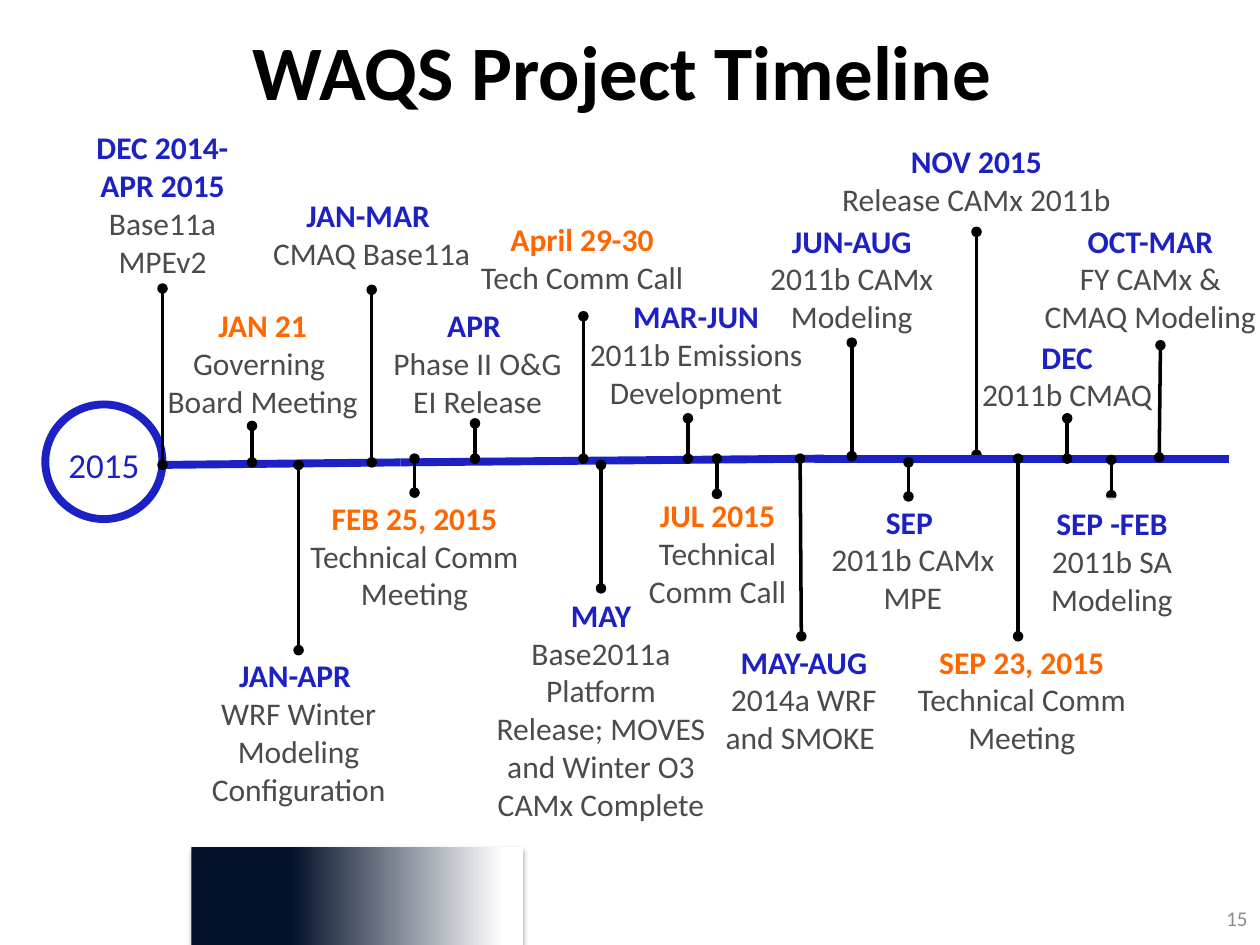
import pptx
import pptx.dml.color
import pptx.enum.shapes
import pptx.enum.text
import pptx.oxml
import pptx.oxml.ns
import pptx.util
from lxml import etree

COLORS = {
    "blue": "1C21C4",
    "orange": "FF6600",
    "body": "4B4B4B",
    "black": "000000",
    "white": "FFFFFF",
    "navy": "03112B",
    "gray": "8C8C8C",
}
COLUMNS, ROWS = 100, 75
SHAPE = pptx.enum.shapes.MSO_SHAPE
ALIGN = pptx.enum.text.PP_ALIGN
ANCHOR = pptx.enum.text.MSO_ANCHOR


def rgb(color):
    return pptx.dml.color.RGBColor.from_string(COLORS[color])


def add_xml(parent, tag, **attributes):
    return etree.SubElement(parent, pptx.oxml.ns.qn(tag), attributes)


class Timeline:
    font = "Calibri"

    def __init__(self, deck):
        self.deck = deck
        self.slide = deck.slides.add_slide(deck.slide_layouts[6])

    def x(self, column):
        return round(self.deck.slide_width * column / COLUMNS)

    def y(self, row):
        return round(self.deck.slide_height * row / ROWS)

    def area(self, left, top, width, height):
        return self.x(left), self.y(top), self.x(width), self.y(height)

    def text(self, area, paragraphs, align=ALIGN.CENTER, anchor=ANCHOR.TOP, grow=True):
        box = self.slide.shapes.add_textbox(*self.area(*area))
        frame = box.text_frame
        frame.word_wrap = True
        frame.vertical_anchor = anchor
        if grow:
            frame.auto_size = pptx.enum.text.MSO_AUTO_SIZE.SHAPE_TO_FIT_TEXT
        for index, (words, size, color, bold) in enumerate(paragraphs):
            paragraph = frame.add_paragraph() if index else frame.paragraphs[0]
            paragraph.alignment = align
            run = paragraph.add_run()
            run.text = words
            run.font.name = self.font
            run.font.size = pptx.util.Pt(size)
            run.font.bold = bold
            run.font.color.rgb = rgb(color)
        return box

    def label(self, area, date, color, *details, veil=False):
        box = self.text(area, [(date, 18, color, True)] + [(detail, 18, "body", False) for detail in details])
        if veil:
            box.fill.solid()
            box.fill.fore_color.rgb = rgb("white")
            tint = box.fill._xPr.find(".//" + pptx.oxml.ns.qn("a:srgbClr"))
            add_xml(tint, "a:alpha", val="84000")

    def line(self, start, end, color, weight, dots=False):
        connector = self.slide.shapes.add_connector(
            pptx.enum.shapes.MSO_CONNECTOR.STRAIGHT,
            self.x(start[0]), self.y(start[1]), self.x(end[0]), self.y(end[1]))
        connector.line.color.rgb = rgb(color)
        connector.line.width = pptx.util.Pt(weight)
        if dots:
            outline = connector.line._get_or_add_ln()
            add_xml(outline, "a:headEnd", type="oval")
            add_xml(outline, "a:tailEnd", type="oval")
        add_xml(connector._element.spPr, "a:effectLst")

    def stem(self, column, top, bottom, lean=0):
        self.line((column, top), (column + lean, bottom), "black", 2, dots=True)

    def ring(self, area, color, weight):
        circle = self.slide.shapes.add_shape(SHAPE.FLOWCHART_CONNECTOR, *self.area(*area))
        circle.shadow.inherit = False
        circle.fill.background()
        circle.line.color.rgb = rgb(color)
        circle.line.width = pptx.util.Pt(weight)

    def fading_band(self, area, stops):
        band = self.slide.shapes.add_shape(SHAPE.RECTANGLE, *self.area(*area))
        band.line.fill.background()
        band.fill.gradient()
        band.fill.gradient_angle = 0
        for stop, (position, color) in zip(band.fill.gradient_stops, stops):
            stop.position = position
            stop.color.rgb = rgb(color)
        effects = add_xml(band._element.spPr, "a:effectLst")
        shadow = add_xml(effects, "a:outerShdw", blurRad=str(pptx.util.Pt(3.1)),
                         dist=str(pptx.util.Pt(1.8)), dir="5400000", rotWithShape="0")
        shade = add_xml(shadow, "a:srgbClr", val=COLORS["black"])
        add_xml(shade, "a:alpha", val="35000")


MILESTONES = [
    ((5.7, 9.7, 14.4, 13.1), "DEC 2014- APR 2015", "blue", ["Base11a MPEv2"], (12.9, 22.9, 36.9)),
    ((19.8, 15.1, 19.4, 7.1), "JAN-MAR ", "blue", ["CMAQ Base11a"], (29.5, 23, 36.7)),
    ((14, 51.6, 19.4, 13.1), "JAN-APR ", "blue", ["WRF Winter Modeling Configuration"], (23.7, 36.9, 51.6)),
    ((44.1, 23.1, 22.3, 10.1), "MAR-JUN", "blue", ["2011b Emissions Development"], (54.6, 33.2, 36.4)),
    ((62.7, 39.4, 19.5, 10.1), "SEP ", "blue", ["2011b CAMx MPE"], (72.1, 36.7, 39.4)),
    ((57.9, 17.1, 19.4, 10.1), "JUN-AUG", "blue", ["2011b CAMx", "Modeling"], (67.6, 27.2, 36.2)),
    ((71.4, 50.5, 19.4, 10.1), "SEP 23, 2015", "orange", ["Technical Comm Meeting"], (80.8, 36.4, 50.5)),
    ((76.4, 26.3, 16.6, 7.1), "DEC", "blue", ["2011b CMAQ"], (84.7, 33.2, 36.4)),
    ((36.5, 17, 19.4, 7.1), "April 29-30", "orange", ["Tech Comm Call"], (46.3, 25.1, 36.4)),
    ((38, 46.8, 19.4, 19.2), "MAY", "blue",
     ["Base2011a Platform Release; MOVES and Winter O3 CAMx Complete"], (47.7, 36.9, 46.7)),
    ((29.3, 23.8, 17.2, 10.1), "APR ", "blue", ["Phase II O&G EI Release"], (37.7, 33.6, 36.4)),
    ((55, 50.5, 17.6, 10.1), "MAY-AUG", "blue", ["2014a WRF and SMOKE "], (63.5, 36.4, 50.5, 0.1)),
    ((11.5, 23.8, 18.7, 10.1), "JAN 21", "orange", ["Governing ", "Board Meeting"], (20, 33.8, 36.7)),
    ((23.2, 39.1, 19.4, 10.1), "FEB 25, 2015", "orange", ["Technical Comm Meeting"], (32.9, 36.4, 39.1)),
    ((48.5, 38.9, 16.9, 10.1), "JUL 2015", "orange", ["Technical Comm Call"], (56.9, 36.4, 39.2)),
    ((81.1, 17.1, 20.4, 10.1), "OCT-MAR", "blue", ["FY CAMx &", "CMAQ Modeling"], (92.1, 27.4, 36.3, -0.1)),
]
AXIS = [((12.9, 36.9), (31.8, 36.7)), ((31.8, 36.7), (65.4, 36.4)), ((64.6, 36.4), (97.5, 36.4))]


def main():
    deck = pptx.Presentation()
    deck.slide_width = pptx.util.Inches(10)
    deck.slide_height = pptx.util.Inches(7.5)
    timeline = Timeline(deck)

    timeline.fading_band((15.2, 67.2, 26.3, 7.8), [(0.3, "navy"), (0.94, "white")])
    timeline.text((94.9, 70.9, 5.1, 4), [("15", 12, "gray", False)], ALIGN.RIGHT, ANCHOR.MIDDLE, grow=False)
    timeline.text((4.4, 0.4, 90, 10.3), [("WAQS Project Timeline", 44, "black", True)],
                  anchor=ANCHOR.MIDDLE, grow=False)

    timeline.stem(77.5, 18.4, 36.1)
    timeline.label((64.2, 10.8, 26.6, 7.1), "NOV 2015", "blue", "Release CAMx 2011b")
    timeline.ring((3.6, 32.1, 9.3, 9.1), "blue", 4.5)
    timeline.text((3.6, 34.7, 9.3, 4.4), [("2015", 20, "blue", False)])
    for start, end in AXIS:
        timeline.line(start, end, "blue", 4.5)

    for area, date, color, details, stem in MILESTONES:
        timeline.label(area, date, color, *details, veil=date == "SEP ")
        timeline.stem(*stem)

    timeline.stem(88.2, 36.5, 39.3)
    timeline.label((82.1, 39.5, 12.3, 10.1), "SEP -FEB", "blue", "2011b SA Modeling", veil=True)
    deck.save("out.pptx")


if __name__ == "__main__":
    main()
